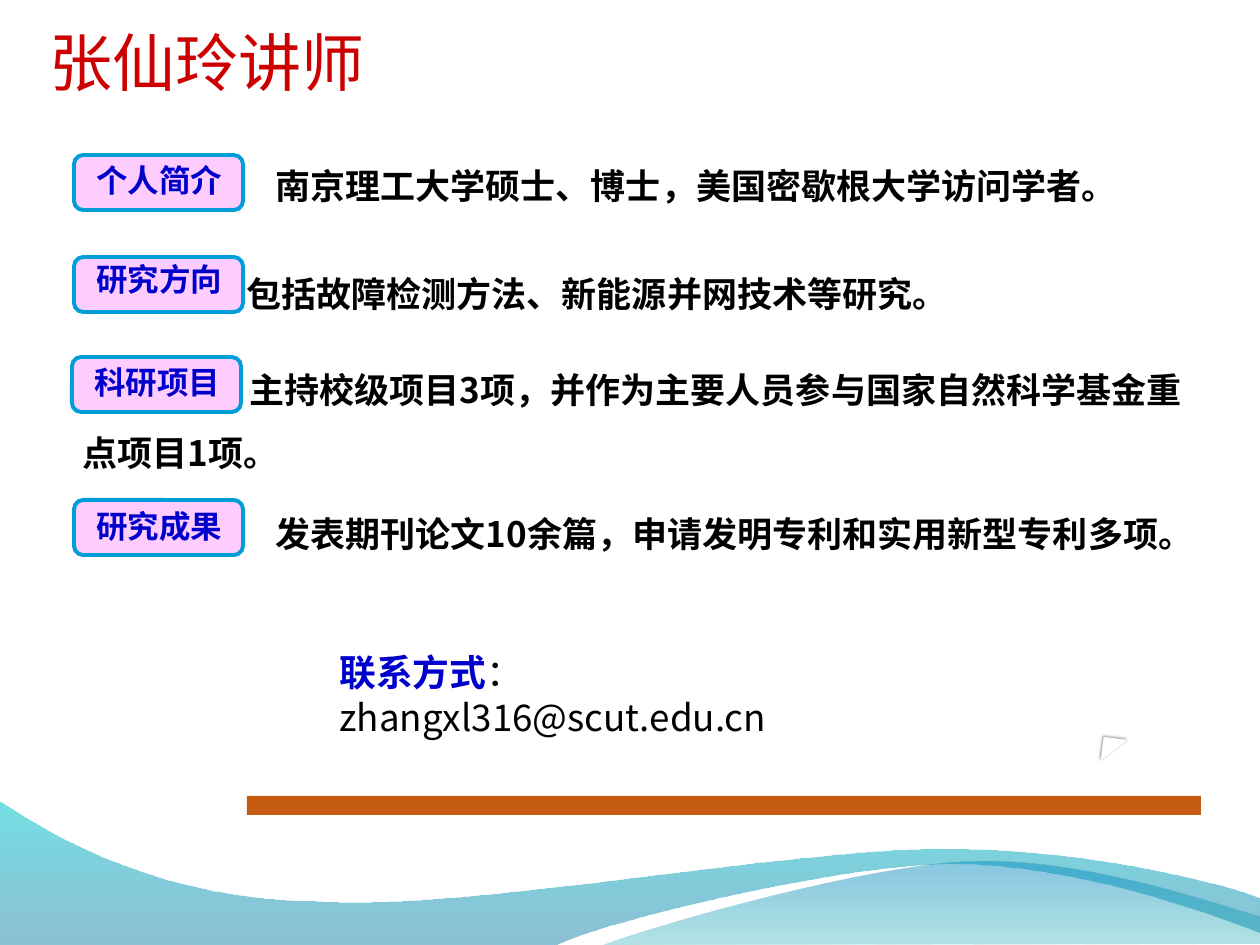
from lxml import etree
from pptx import Presentation
from pptx import util as u
from pptx.dml.color import RGBColor
from pptx.enum import shapes, text
from pptx.oxml import ns

SCALE = 914400 / 126
FONT = "Noto Sans CJK SC"
BLUE = "0000CC"


def px(value):
    """Turn pixels into EMU."""
    return u.Emu(round(value * SCALE))


def color(value):
    """Turn a hex string into a colour."""
    return RGBColor.from_string(value)


def add_child(parent, tag, **attributes):
    """Append a drawing element with the given attributes."""
    values = {name: str(value) for name, value in attributes.items()}
    return etree.SubElement(parent, ns.qn(tag), values)


def add_block(slide, kind, box, fill, line=None, width=1):
    """Add a filled preset shape in the box."""
    shape = slide.shapes.add_shape(kind, *map(px, box))
    shape.shadow.inherit = False
    shape.fill.solid()
    shape.fill.fore_color.rgb = color(fill)
    if line:
        shape.line.color.rgb = color(line)
        shape.line.width = u.Pt(width)
    else:
        shape.line.fill.background()
    return shape


def format_run(run, size, hex_color, bold, font=FONT):
    """Give a run its size, colour, weight and fonts."""
    run.font.name = font
    run.font.size = u.Pt(size)
    run.font.bold = bold
    run.font.color.rgb = color(hex_color)
    add_child(run.font._element, "a:ea", typeface=FONT)


def add_text(slide, box, wording, size, hex_color, bold=True, font=FONT,
             spacing=None, wrap=True):
    """Add a one-paragraph text box."""
    shape = slide.shapes.add_textbox(*map(px, box))
    frame = shape.text_frame
    frame.text = wording
    frame.word_wrap = wrap
    paragraph = frame.paragraphs[0]
    if spacing:
        paragraph.line_spacing = spacing
    format_run(paragraph.runs[0], size, hex_color, bold, font)
    return shape


def bend(lines):
    """Merge three consecutive line elements into one cubic curve."""
    curve = etree.Element(ns.qn("a:cubicBezTo"))
    lines[0].addprevious(curve)
    for line in lines:
        curve.append(line[0])
        line.getparent().remove(line)


def add_wave(slide, start, segments, stops):
    """Add a curved band with a translucent vertical gradient."""
    builder = slide.shapes.build_freeform(*start, scale=SCALE)
    builder.add_line_segments([point for segment in segments for point in segment])
    shape = builder.convert_to_shape()
    lines = list(shape._element.spPr.iter(ns.qn("a:lnTo")))
    for segment in segments:
        part, lines = lines[:len(segment)], lines[len(segment):]
        if len(segment) == 3:
            bend(part)
    shape.shadow.inherit = False
    shape.line.fill.background()
    shape.fill.gradient()
    shape.fill.gradient_angle = 90
    for stop, (position, hex_color, opacity) in zip(shape.fill.gradient_stops, stops):
        stop.position = position
        stop.color.rgb = color(hex_color)
    tints = shape._element.spPr.iter(ns.qn("a:srgbClr"))
    for tint, (position, hex_color, opacity) in zip(tints, stops):
        add_child(tint, "a:alpha", val=opacity * 1000)


def add_background(slide):
    """Draw the corner triangle, the two waves and the bar."""
    triangle = add_block(slide, shapes.MSO_SHAPE.RIGHT_TRIANGLE, (1103, 739, 21, 21),
                         "FFFFFF", "FFFFFF")
    triangle.rotation = 7
    properties = triangle._element.spPr
    properties.find(ns.qn("a:xfrm")).set("flipV", "1")
    shadow = add_child(properties.find(ns.qn("a:effectLst")), "a:outerShdw",
                       blurRad=u.Pt(1.6), dist=u.Pt(0.5), dir=215 * 60000)
    add_child(add_child(shadow, "a:srgbClr", val="000000"), "a:alpha", val=47000)

    add_wave(slide, (0, 945), [
        [(554, 945)],
        [(600, 922), (837, 864), (955, 864)],
        [(1075, 864), (1207, 912), (1260, 932)],
        [(1261, 898)],
        [(1239, 888), (1096, 848), (940, 849)],
        [(784, 849), (481, 908), (324, 901)],
        [(163, 900), (58, 839), (-1, 801)],
    ], [(0, "0074A1", 45), (1, "00C6CF", 55)])
    add_wave(slide, (604, 945), [
        [(641, 930), (859, 866), (969, 862)],
        [(1079, 857), (1211, 903), (1260, 917)],
        [(1260, 944)],
    ], [(0, "00A1A9", 30), (0.8, "008BBF", 45)])
    add_block(slide, shapes.MSO_SHAPE.RECTANGLE, (247, 796, 954, 19), "C55A11")


def add_title(slide, box):
    """Add the lecturer's name as the heading."""
    frame = add_text(slide, box, "张仙玲讲师", 36, "CC0000", False, "Calibri").text_frame
    frame.vertical_anchor = text.MSO_ANCHOR.BOTTOM
    frame.margin_left = frame.margin_right = frame.margin_bottom = 0


def add_label(slide, left, top, wording, shift):
    """Add a rounded pink label with its caption."""
    add_block(slide, shapes.MSO_SHAPE.ROUNDED_RECTANGLE, (left, top, 169, 55),
              "FFCCFF", "009DD9", 2.25)
    add_text(slide, (left + 10, top + shift, 154, 50), wording, 18, BLUE, wrap=False)


def add_section(slide, label, box, wording, spacing, margin=0, indent=0):
    """Add a label and the statement beside it."""
    add_label(slide, *label)
    shape = add_text(slide, box, wording, 20, "000000", spacing=spacing)
    properties = shape.text_frame.paragraphs[0]._p.get_or_add_pPr()
    properties.set("marL", str(px(margin)))
    properties.set("indent", str(px(indent)))


def add_contact(slide, box):
    """Add the contact line with its blue heading."""
    shape = add_text(slide, box, "联系方式", 21, BLUE)
    run = shape.text_frame.paragraphs[0].add_run()
    run.text = "： zhangxl316@scut.edu.cn"
    format_run(run, 21, "000000", False)


def main():
    """Build and save the slide."""
    presentation = Presentation()
    presentation.slide_width, presentation.slide_height = px(1260), px(945)
    slide = presentation.slides.add_slide(presentation.slide_layouts[6])
    add_background(slide)
    add_title(slide, (49, 20, 961, 79))
    add_contact(slide, (327, 644, 605, 57))
    add_section(slide, (74, 155, "个人简介", 0), (263, 150, 937, 60),
                "南京理工大学硕士、博士，美国密歇根大学访问学者。", 1.2)
    add_section(slide, (74, 257, "研究方向", -3), (7, 245, 1029, 71),
                "包括故障检测方法、新能源并网技术等研究。", 1.5, margin=227)
    add_section(slide, (72, 357, "科研项目", 0), (15, 341, 1186, 140),
                "主持校级项目3项，并作为主要人员参与国家自然科学基金重点项目1项。",
                1.5, margin=55, indent=167)
    add_section(slide, (74, 500, "研究成果", 1), (263, 485, 983, 71),
                "发表期刊论文10余篇，申请发明专利和实用新型专利多项。", 1.5)
    presentation.save("out.pptx")


if __name__ == "__main__":
    main()
